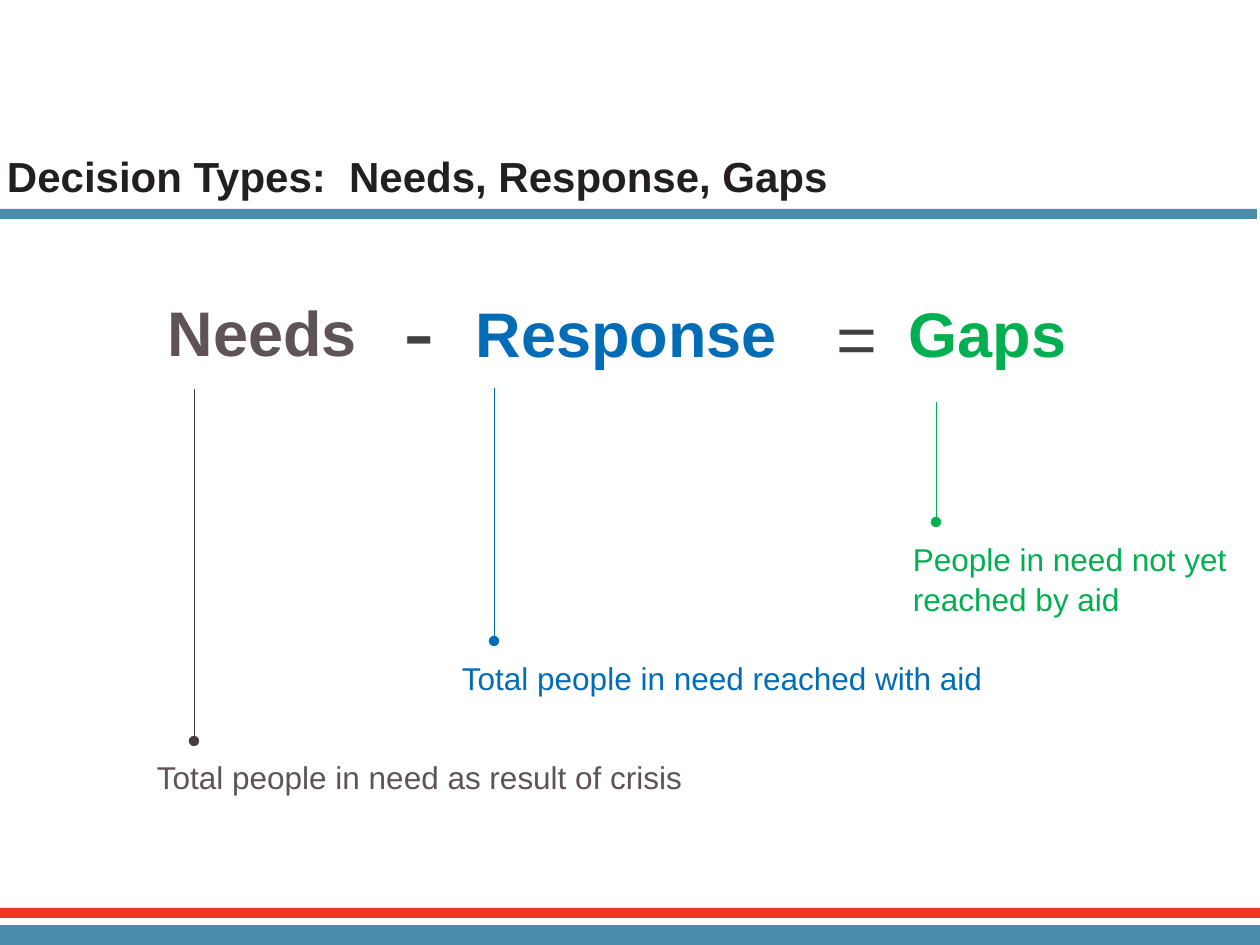
from lxml import etree
from pptx import Presentation
from pptx.dml.color import RGBColor
from pptx.enum.shapes import MSO_CONNECTOR, MSO_SHAPE
from pptx.enum.text import MSO_ANCHOR, PP_ALIGN
from pptx.oxml.ns import qn
from pptx.util import Pt

RECT = MSO_SHAPE.RECTANGLE
LINE = MSO_CONNECTOR.STRAIGHT
TOP = MSO_ANCHOR.TOP
LEFT = PP_ALIGN.LEFT
TEAL = RGBColor(0x4A, 0x8D, 0xAA)
RED = RGBColor(0xEE, 0x35, 0x28)
INK = RGBColor(0x23, 0x1F, 0x20)
GREY = RGBColor(0x5E, 0x53, 0x56)
DARK = RGBColor(0x46, 0x3E, 0x40)
SIGN = RGBColor(0x40, 0x40, 0x40)
BLUE = RGBColor(0x02, 0x6C, 0xB6)
GREEN = RGBColor(0x00, 0xB0, 0x50)

BARS = [(-3, 209, 10, TEAL), (0, 925, 20, TEAL), (0, 908, 10, RED)]
TERMS = [
    ("Needs", (159, 281, 217, 90), 36, GREY, True),
    ("-", (395, 256, 57, 127), 54, SIGN, False),
    ("Response", (467, 282, 329, 90), 36, BLUE, True),
    ("=", (828, 281, 67, 97), 40, SIGN, False),
    ("Gaps", (900, 282, 184, 90), 36, GREEN, True),
]
NOTES = [
    ("Total people in need as result of crisis", (144, 750, 554, 50), GREY),
    ("Total people in need reached with aid", (449, 651, 551, 50), BLUE),
    ("People in need not yet reached by aid", (900, 532, 353, 90), GREEN),
]
STEMS = [(194, 389, 741, DARK), (494, 388, 641, BLUE), (936, 402, 522, GREEN)]


def px(n):
    """Turn px into EMU."""
    return round(n * 914400 / 126)


def add_bar(slide, left, top, high, color):
    """Draw a band as wide as the slide."""
    bar = slide.shapes.add_shape(RECT, px(left), px(top), px(1260), px(high))
    bar.shadow.inherit = False
    bar.fill.solid()
    bar.fill.fore_color.rgb = color
    bar.line.fill.background()


def set_text(shape, text, size, color, bold=False, wrap=True, inset=(13, 6)):
    """Fill a shape with one styled run."""
    frame = shape.text_frame
    frame.word_wrap = wrap
    frame.vertical_anchor = TOP
    frame.margin_left = frame.margin_right = px(inset[0])
    frame.margin_top = frame.margin_bottom = px(inset[1])
    para = frame.paragraphs[0]
    para.alignment = LEFT
    para.line_spacing = 1.06
    para.space_before = Pt(0)
    run = para.add_run()
    run.text = text
    font = run.font
    font.name, font.size, font.bold = "Arial", Pt(size), bold
    font.color.rgb = color


def add_title(slide, text):
    """Place and fill the title."""
    title = slide.shapes.title
    title.left, title.top = px(-2), px(140)
    title.width, title.height = px(853), px(81)
    set_text(title, text, 24, INK, True, False, (9, 8))


def add_term(slide, text, box, size, color, bold):
    """Add one word or sign of the equation."""
    shape = slide.shapes.add_textbox(*map(px, box))
    set_text(shape, text, size, color, bold, False, (9, 8))


def add_note(slide, text, box, color):
    """Add the meaning of a term."""
    set_text(slide.shapes.add_textbox(*map(px, box)), text, 18, color)


def add_stem(slide, left, top, end, color):
    """Draw a line down to a round dot."""
    stem = slide.shapes.add_connector(LINE, px(left), px(top), px(left), px(end))
    stem.line.color.rgb = color
    stem.line.width = Pt(0.5)
    props = stem.line._get_or_add_ln()
    etree.SubElement(props, qn("a:tailEnd"), type="oval")
    etree.SubElement(stem._element.spPr, qn("a:effectLst"))


def main():
    """Build and save the slide."""
    deck = Presentation()
    deck.slide_width, deck.slide_height = px(1260), px(945)
    slide = deck.slides.add_slide(deck.slide_layouts[5])
    for bar in BARS:
        add_bar(slide, *bar)
    add_title(slide, "Decision Types:  Needs, Response, Gaps")
    for term in TERMS:
        add_term(slide, *term)
    for stem in STEMS:
        add_stem(slide, *stem)
    for note in NOTES:
        add_note(slide, *note)
    deck.save("out.pptx")


if __name__ == "__main__":
    main()
